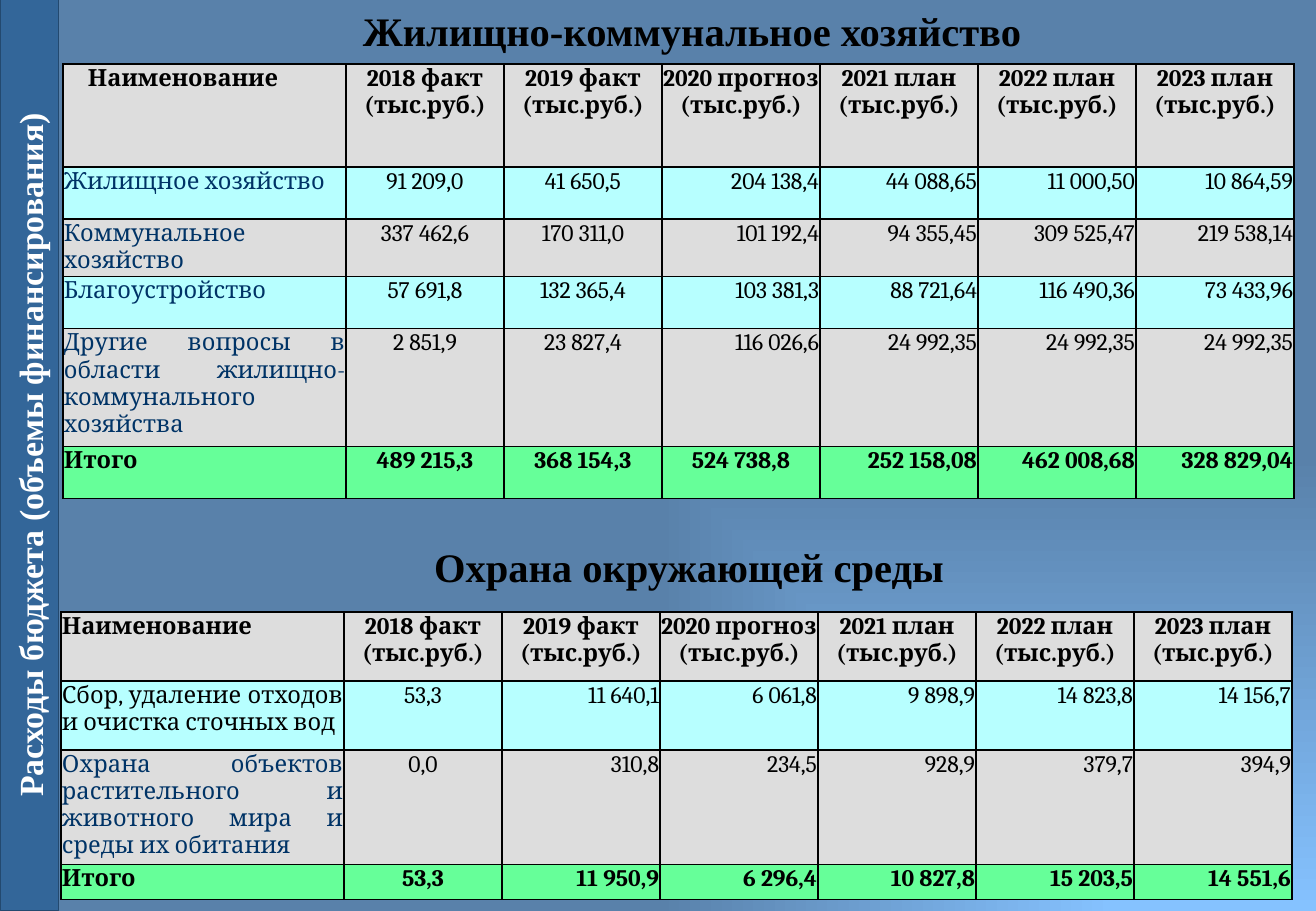
from lxml import etree
from pptx import Presentation
from pptx import util as u
from pptx.dml import color
from pptx.enum import shapes, text
from pptx.oxml import ns

SCALE = 7526
BLACK, WHITE, NAVY = "000000", "FFFFFF", "003366"
GREY, CYAN, GREEN = "DDDDDD", "B7FFFF", "66FF99"
LEFT, CENTER = text.PP_ALIGN.LEFT, text.PP_ALIGN.CENTER
RIGHT, JUSTIFY = text.PP_ALIGN.RIGHT, text.PP_ALIGN.JUSTIFY


def px(length):
    return u.Emu(length * SCALE)


def rgb(code):
    return color.RGBColor.from_string(code)


def child(parent, tag, **attributes):
    return etree.SubElement(parent, ns.qn(tag), attributes)


class BudgetPage:
    heading_font = "Times New Roman"
    table_font = "Cambria"
    label_width = 283
    year_width = 158

    def __init__(self, deck):
        self.page = deck.slides.add_slide(deck.slide_layouts[6])

    def backdrop(self, corner, base, opacity):
        fill = self.page.background.fill
        fill.gradient()
        for stop, code, position in zip(fill.gradient_stops, (corner, base), (0, 1)):
            stop.color.rgb = rgb(code)
            stop.position = position
        gradient = next(self.page.element.iter(ns.qn("a:gradFill")))
        child(next(gradient.iter(ns.qn("a:srgbClr"))), "a:alpha", val=str(opacity * 1000))
        linear = gradient.find(ns.qn("a:lin"))
        radial = etree.Element(ns.qn("a:path"), {"path": "rect"})
        child(radial, "a:fillToRect", l="100000", t="100000")
        gradient.replace(linear, radial)

    def add_words(self, para, words, size, font, code, bold, align):
        para.alignment = align
        span = para.add_run()
        span.text = words
        span.font.size = u.Pt(size)
        span.font.name = font
        span.font.bold = bold
        span.font.color.rgb = rgb(code)

    def sidebar(self, words, left, top, width, height):
        box = self.page.shapes.add_shape(
            shapes.MSO_SHAPE.RECTANGLE, px(left), px(top), px(width), px(height))
        box.rotation = 270
        box.shadow.inherit = False
        box.fill.solid()
        box.fill.fore_color.rgb = rgb("336699")
        box.line.color.rgb = rgb("23496F")
        box.line.width = u.Pt(1)
        box.text_frame.vertical_anchor = text.MSO_ANCHOR.MIDDLE
        self.add_words(
            box.text_frame.paragraphs[0], words, 20, self.heading_font, WHITE, True, CENTER)

    def heading(self, words, left, top):
        box = self.page.shapes.add_textbox(px(left), px(top), px(1188), px(61))
        frame = box.text_frame
        frame.word_wrap = True
        frame.auto_size = text.MSO_AUTO_SIZE.SHAPE_TO_FIT_TEXT
        frame.vertical_anchor = text.MSO_ANCHOR.MIDDLE
        self.add_words(frame.paragraphs[0], words, 24, self.heading_font, BLACK, True, CENTER)

    def cell(self, cell, words, fill, code, bold, align):
        cell.margin_left = cell.margin_top = cell.margin_right = px(1)
        cell.margin_bottom = 0
        cell.fill.solid()
        cell.fill.fore_color.rgb = rgb(fill)
        properties = cell._tc.get_or_add_tcPr()
        for index, side in enumerate(("a:lnL", "a:lnR", "a:lnT", "a:lnB")):
            border = etree.Element(ns.qn(side), {"w": "12700"})
            child(child(border, "a:solidFill"), "a:srgbClr", val=BLACK)
            properties.insert(index, border)
        para = cell.text_frame.paragraphs[0]
        self.add_words(para, words, 14, self.table_font, code, bold, align)

    def table(self, left, top, heights, rows):
        last = len(rows) - 1
        width = self.label_width + 6 * self.year_width
        grid = self.page.shapes.add_table(
            len(rows), 7, px(left), px(top), px(width), px(sum(heights))).table
        grid.first_row = grid.horz_banding = False
        for index, column in enumerate(grid.columns):
            column.width = px(self.year_width if index else self.label_width)
        for index, (label, values, centred, code) in enumerate(rows):
            grid.rows[index].height = px(heights[index])
            fill = GREEN if index == last else (GREY, CYAN)[index % 2]
            bold = index in (0, last)
            self.cell(grid.cell(index, 0), label, fill, code, bold, JUSTIFY if index else LEFT)
            for number, value in enumerate(values, 1):
                align = CENTER if number <= centred else RIGHT
                self.cell(grid.cell(index, number), value, fill, BLACK, bold, align)
        return grid


YEARS = ("2018 факт", "2019 факт", "2020 прогноз", "2021 план", "2022 план", "2023 план")
HEADER = ("Наименование", [f"{year} (тыс.руб.)" for year in YEARS], 6, BLACK)

HOUSING = [
    HEADER,
    ("Жилищное хозяйство",
     ("91 209,0", "41 650,5", "204 138,4", "44 088,65", "11 000,50", "10 864,59"), 2, NAVY),
    ("Коммунальное хозяйство",
     ("337 462,6", "170 311,0", "101 192,4", "94 355,45", "309 525,47", "219 538,14"), 2, NAVY),
    ("Благоустройство",
     ("57 691,8", "132 365,4", "103 381,3", "88 721,64", "116 490,36", "73 433,96"), 2, NAVY),
    ("Другие вопросы в области жилищно-коммунального хозяйства",
     ("2 851,9", "23 827,4", "116 026,6", "24 992,35", "24 992,35", "24 992,35"), 2, NAVY),
    ("Итого",
     ("489 215,3", "368 154,3", "524 738,8", "252 158,08", "462 008,68", "328 829,04"), 3, BLACK),
]

ENVIRONMENT = [
    HEADER,
    ("Сбор, удаление отходов и очистка сточных вод",
     ("53,3", "11 640,1", "6 061,8", "9 898,9", "14 823,8", "14 156,7"), 1, BLACK),
    ("Охрана объектов растительного и животного мира и среды их обитания",
     ("0,0", "310,8", "234,5", "928,9", "379,7", "394,9"), 1, NAVY),
    ("Итого",
     ("53,3", "11 950,9", "6 296,4", "10 827,8", "15 203,5", "14 551,6"), 1, BLACK),
]


def main():
    deck = Presentation()
    deck.slide_width, deck.slide_height = px(1316), px(911)
    budget = BudgetPage(deck)
    budget.backdrop("85C2FF", "5981AA", 29)
    budget.sidebar("Расходы бюджета (объемы финансирования)", -426, 426, 911, 58)
    budget.heading("Жилищно-коммунальное хозяйство", 98, 0)
    budget.heading("Охрана окружающей среды", 95, 536)
    housing = budget.table(63, 64, (103, 52, 52, 52, 118, 52), HOUSING)
    housing.cell(0, 0).margin_left = px(25)
    budget.table(61, 612, (69, 69, 104, 35), ENVIRONMENT)
    deck.save("out.pptx")


if __name__ == "__main__":
    main()
